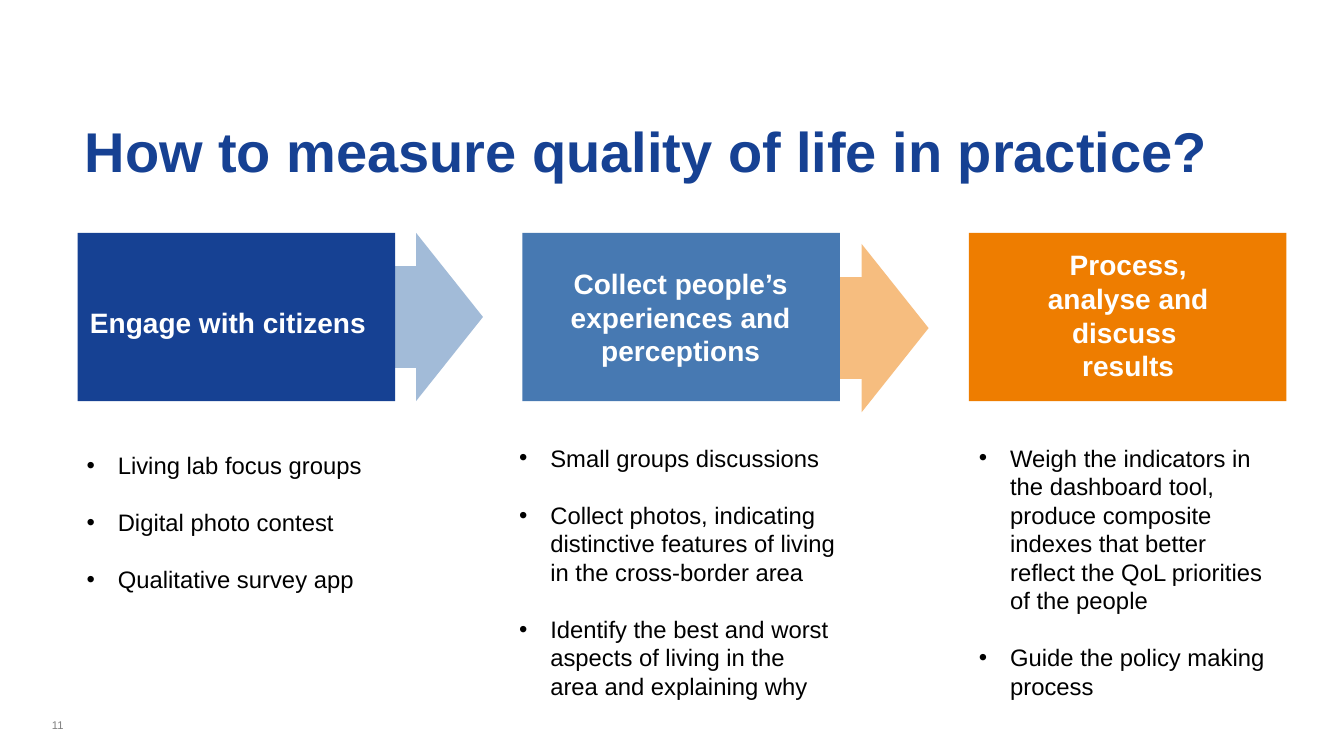
"""Build the slide on measuring quality of life in practice."""
import pptx
import pptx.dml.color
import pptx.enum.shapes
import pptx.enum.text
import pptx.oxml
import pptx.oxml.ns
import pptx.util
from pptx.util import Inches

RGBColor = pptx.dml.color.RGBColor
NAVY = RGBColor(0x16, 0x41, 0x93)
STEEL = RGBColor(0x47, 0x79, 0xB2)
ORANGE = RGBColor(0xEE, 0x7D, 0x00)
WHITE = RGBColor(0xFF, 0xFF, 0xFF)
BLACK = RGBColor(0x00, 0x00, 0x00)
GRAY = RGBColor(0x80, 0x80, 0x80)

Align = pptx.enum.text.PP_ALIGN
Anchor = pptx.enum.text.MSO_ANCHOR
Shape = pptx.enum.shapes.MSO_SHAPE

CARD_TOP, CARD_WIDTH, CARD_HEIGHT = 2.31, 3.15, 1.67
ARROW_WIDTH = 0.95
LABEL_SIZE, LIST_SIZE = 20, 17
INDENT = 0.31

STEPS = [
    {
        "left": 0.77, "color": NAVY,
        "label": ["Engage with citizens "], "label_area": (0.76, 2.98, 3.08, 0.43),
        "items": ["Living lab focus groups", "Digital photo contest", "Qualitative survey app"],
        "list_area": (0.76, 4.42, 3.08, 1.53),
    },
    {
        "left": 5.18, "color": STEEL,
        "label": ["Collect people’s ", "experiences and ", "perceptions "],
        "label_area": (5.49, 2.59, 2.6, 1.11),
        "items": [
            "Small groups discussions",
            "Collect photos, indicating distinctive features of living in the cross-border area",
            "Identify the best and worst aspects of living in the area and explaining why",
        ],
        "list_area": (5.05, 4.35, 3.36, 3.25),
    },
    {
        "left": 9.61, "color": ORANGE,
        "label": ["Process, analyse and discuss ", "results"],
        "label_area": (10.27, 2.4, 1.84, 1.45),
        "items": [
            "Weigh the indicators in the dashboard tool, produce composite indexes "
            "that better reflect the QoL priorities of the people",
            "Guide the policy making process",
        ],
        "list_area": (9.61, 4.35, 3.15, 2.68),
    },
]


def add_bullet(para):
    """Give a paragraph a hanging round bullet."""
    properties = para._p.get_or_add_pPr()
    properties.set("marL", str(Inches(INDENT)))
    properties.set("indent", str(-Inches(INDENT)))
    namespace = pptx.oxml.ns.nsdecls("a")
    for markup in (
        f'<a:buClr {namespace}><a:srgbClr val="{BLACK}"/></a:buClr>',
        f'<a:buFont {namespace} typeface="Arial"/>',
        f'<a:buChar {namespace} char="•"/>',
    ):
        properties.append(pptx.oxml.parse_xml(markup))


def add_text(page, lines, area, size, color, bold=False, align=Align.LEFT,
             anchor=Anchor.TOP, inset=True, bullets=False, spacing=None, gap=0):
    """Add a text box with one paragraph for each line."""
    box = page.shapes.add_textbox(*map(Inches, area))
    frame = box.text_frame
    frame.word_wrap = True
    frame.vertical_anchor = anchor
    if not inset:
        frame.margin_left = frame.margin_right = 0
        frame.margin_top = frame.margin_bottom = 0
    for index, line in enumerate(lines):
        para = frame.paragraphs[0] if index == 0 else frame.add_paragraph()
        if bullets:
            add_bullet(para)
        para.alignment = align
        para.line_spacing = pptx.util.Pt(spacing or size * 1.2)
        if index:
            para.space_before = pptx.util.Pt(gap)
        span = para.add_run()
        span.text = line
        span.font.name = "Arial"
        span.font.size = pptx.util.Pt(size)
        span.font.bold = bold
        span.font.color.rgb = color


def add_block(page, kind, area, color):
    """Add a plain filled shape and return it."""
    block = page.shapes.add_shape(kind, *map(Inches, area))
    block.shadow.inherit = False
    block.fill.solid()
    block.fill.fore_color.rgb = color
    block.line.fill.background()
    return block


def add_arrow(page, left, top, color):
    """Add a half-transparent arrow leading to the next step."""
    arrow = add_block(page, Shape.RIGHT_ARROW, (left, top, ARROW_WIDTH, CARD_HEIGHT), color)
    arrow.adjustments[0] = 0.605
    arrow.adjustments[1] = 0.699
    swatch = arrow._element.spPr.find(".//" + pptx.oxml.ns.qn("a:srgbClr"))
    namespace = pptx.oxml.ns.nsdecls("a")
    swatch.append(pptx.oxml.parse_xml(f'<a:alpha {namespace} val="50000"/>'))


def add_step(page, step):
    """Add the card, label and bullet list of one step."""
    card_area = (step["left"], CARD_TOP, CARD_WIDTH, CARD_HEIGHT)
    add_block(page, Shape.RECTANGLE, card_area, step["color"])
    add_text(page, step["label"], step["label_area"], LABEL_SIZE, WHITE, bold=True,
             align=Align.CENTER, anchor=Anchor.MIDDLE)
    add_text(page, step["items"], step["list_area"], LIST_SIZE, BLACK, bullets=True,
             gap=LIST_SIZE * 1.2)


def main():
    """Build and save the presentation."""
    deck = pptx.Presentation()
    deck.slide_width = Inches(13.33)
    deck.slide_height = Inches(7.5)
    page = deck.slides.add_slide(deck.slide_layouts[6])
    add_text(page, ["How to measure quality of life in practice?"], (0.84, 0.9, 12.49, 0.92),
             40, NAVY, bold=True, anchor=Anchor.BOTTOM, inset=False, spacing=44)
    add_arrow(page, 3.84, CARD_TOP, STEEL)
    add_arrow(page, 8.26, 2.42, ORANGE)
    for step in STEPS:
        add_step(page, step)
    add_text(page, ["11"], (0.12, 7.09, 0.51, 0.2), 8, GRAY, align=Align.RIGHT,
             anchor=Anchor.MIDDLE, inset=False)
    deck.save("out.pptx")


if __name__ == "__main__":
    main()
